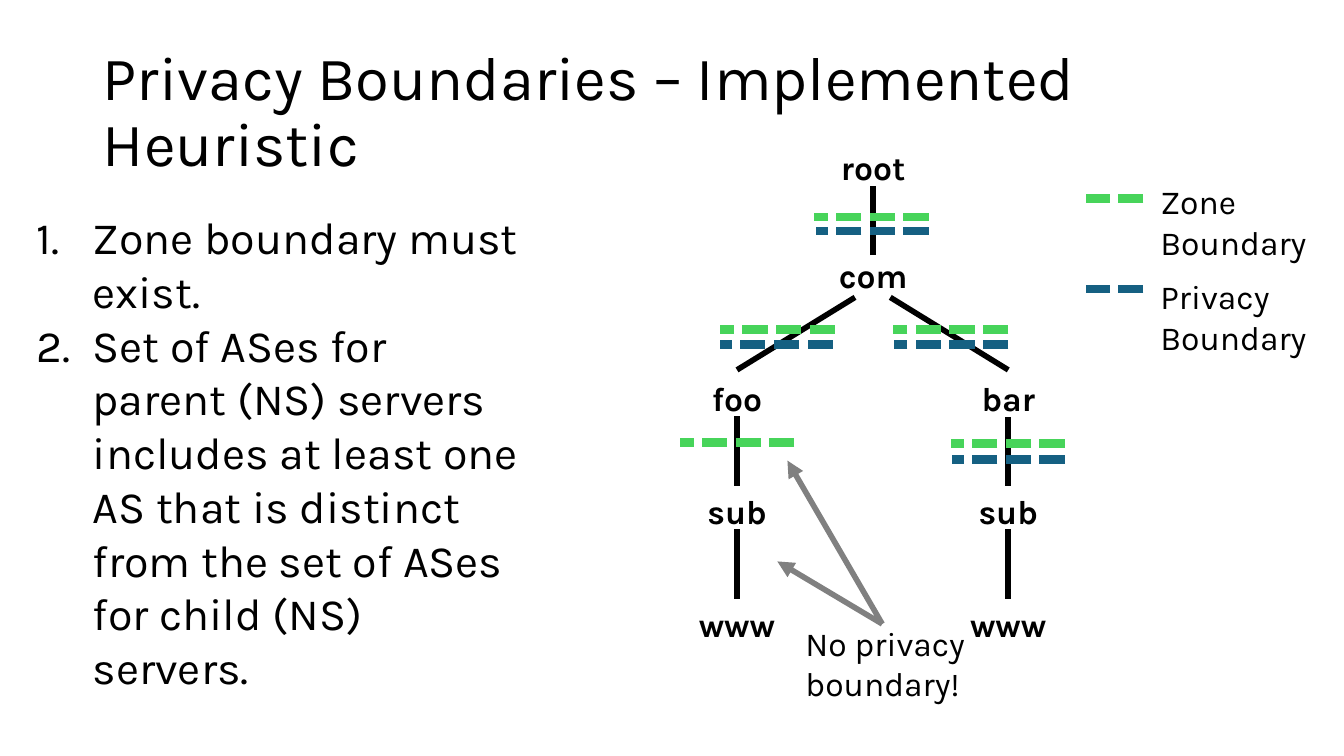
from lxml.etree import SubElement
from pptx import Presentation
from pptx.dml.color import RGBColor
from pptx.enum.dml import MSO_LINE_DASH_STYLE as Dash
from pptx.enum.shapes import MSO_CONNECTOR as Connector
from pptx.enum.text import MSO_ANCHOR as Anchor, MSO_AUTO_SIZE as AutoSize, PP_ALIGN as Align
from pptx.oxml.ns import qn
from pptx.util import Inches, Pt

FONT = "Karla"
COLORS = {"text": "000000", "zone": "47D45A", "privacy": "156082", "arrow": "808080"}

# Content
TITLE = "Privacy Boundaries – Implemented Heuristic"
RULES = [
    "Zone boundary must exist.",
    "Set of ASes for parent (NS) servers includes at least one AS that is "
    "distinct from the set of ASes for child (NS) servers.",
]

# Tree columns (centres) and the tops of its label rows
FOO, ROOT, BAR = 7.31, 8.66, 10
LABEL_HEIGHT = 0.5
NODES = [  # name, centre, top, width
    ("root", ROOT, 1.41, 1.3), ("com", ROOT, 2.48, 1.3),
    ("foo", FOO, 3.7, 1.94), ("bar", BAR, 3.7, 2.5),
    ("sub", FOO, 4.82, 2.5), ("sub", BAR, 4.82, 2.5),
    ("www", FOO, 5.94, 2.5), ("www", BAR, 5.94, 2.5),
]
EDGES = [  # from x, y, to x, y
    (ROOT, 2.53, ROOT, 1.85),
    (FOO, 3.67, 8.48, 2.95), (BAR, 3.67, 8.83, 2.95),
    (FOO, 4.82, FOO, 4.13), (BAR, 4.82, BAR, 4.14),
    (FOO, 5.94, FOO, 5.25), (BAR, 5.94, BAR, 5.25),
]
BOUNDARIES = {  # right end, left end, y
    "zone": [(9.21, 8.07, 2.15), (8.28, 7.14, 3.27), (10, 8.86, 3.27),
             (7.88, 6.74, 4.39), (10.56, 9.43, 4.4)],
    "privacy": [(9.21, 8.09, 2.29), (8.26, 7.14, 3.42), (10, 8.87, 3.42),
                (10.56, 9.44, 4.56)],
}
LEGEND = [("zone", "Zone Boundary", 1.75, 1.97),  # kind, text, text top, key y
          ("privacy", "Privacy Boundary", 2.69, 2.87)]
NOTE = "No privacy boundary!"
ARROW_START = (8.75, 6.19)
ARROW_TIPS = [(7.81, 4.57), (7.71, 5.57)]

presentation = Presentation()
presentation.slide_width, presentation.slide_height = Inches(13.33), Inches(7.5)
slide = presentation.slides.add_slide(presentation.slide_layouts[1])


def place(shape, left, top, width, height):
    shape.left, shape.top = Inches(left), Inches(top)
    shape.width, shape.height = Inches(width), Inches(height)


def style(paragraph, size, align=Align.LEFT, bold=False):
    paragraph.alignment = align
    paragraph.space_before = Pt(0)
    font = paragraph.font
    font.name, font.size, font.bold = FONT, Pt(size), bold
    font.color.rgb = RGBColor.from_string(COLORS["text"])


def add_text(text, left, top, width, height, **options):
    box = slide.shapes.add_textbox(*map(Inches, (left, top, width, height)))
    box.text_frame.word_wrap = True
    box.text_frame.text = text
    style(box.text_frame.paragraphs[0], 24, **options)


def add_line(x1, y1, x2, y2, color, width=4, dash=None, arrow=False):
    line = slide.shapes.add_connector(Connector.STRAIGHT, *map(Inches, (x1, y1, x2, y2)))
    line.line.color.rgb = RGBColor.from_string(COLORS[color])
    line.line.width = Pt(width)
    if dash:
        line.line.dash_style = dash
    properties = line._element.spPr
    if arrow:
        SubElement(properties.find(qn("a:ln")), qn("a:tailEnd"), type="triangle")
    SubElement(properties, qn("a:effectLst"))


def add_boundary(right, left, y, kind):
    add_line(right, y, left, y, kind, width=6, dash=Dash.SQUARE_DOT)


# Title
title = slide.shapes.title
place(title, 0.92, 0.4, 11.5, 1.45)
title.text_frame.text = TITLE
title.text_frame.auto_size = AutoSize.NONE
title.text_frame.vertical_anchor = Anchor.MIDDLE
title.text_frame.paragraphs[0].line_spacing = 0.9
style(title.text_frame.paragraphs[0], 44)

# Numbered rules
body = slide.placeholders[1]
place(body, 0.26, 2.03, 5.01, 4.41)
body.text_frame.text = "\n".join(RULES)
body.text_frame.auto_size = AutoSize.NONE
for paragraph in body.text_frame.paragraphs:
    properties = paragraph._p.get_or_add_pPr()
    properties.set("marL", str(Inches(0.56)))
    properties.set("indent", str(Inches(-0.56)))
    SubElement(properties, qn("a:buFont"), typeface=FONT)
    SubElement(properties, qn("a:buAutoNum"), type="arabicPeriod")
    style(paragraph, 32)

# Tree
for edge in EDGES:
    add_line(*edge, "text")
for name, centre, top, width in NODES:
    add_text(name, centre - width / 2, top, width, LABEL_HEIGHT, align=Align.CENTER, bold=True)
for kind, spans in BOUNDARIES.items():
    for span in spans:
        add_boundary(*span, kind)

# Legend
for kind, text, top, key_y in LEGEND:
    add_boundary(11.34, 10.77, key_y, kind)
    add_text(text, 11.41, top, 1.93, 0.91)

# Note with arrows
add_text(NOTE, 7.89, 6.13, 1.86, 0.91)
for tip in ARROW_TIPS:
    add_line(*ARROW_START, *tip, "arrow", arrow=True)

presentation.save("out.pptx")
